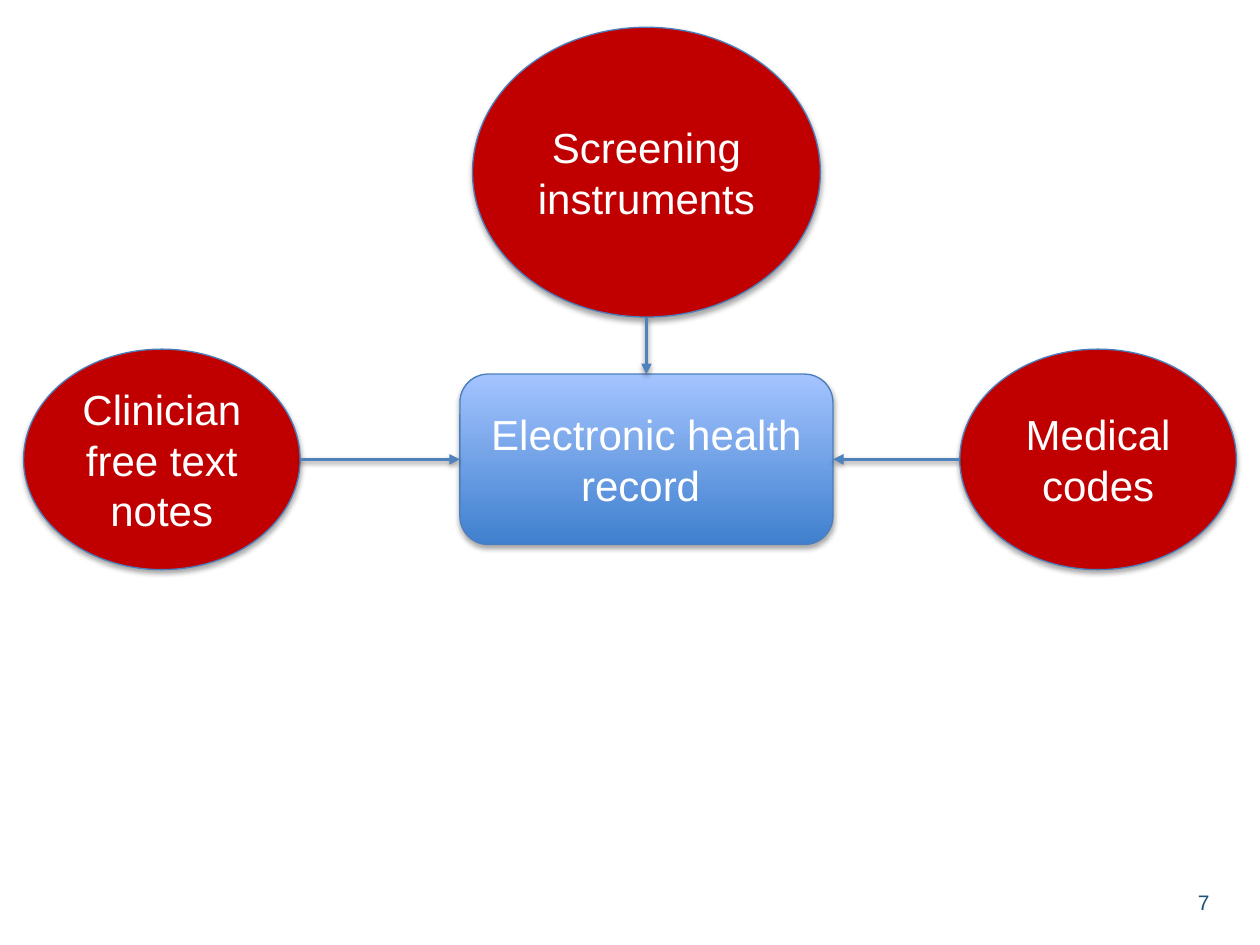
from lxml.etree import SubElement
from pptx import Presentation
from pptx.dml.color import RGBColor
from pptx.enum.shapes import MSO_CONNECTOR as Connector, MSO_SHAPE as Shape
from pptx.enum.text import MSO_ANCHOR as Anchor, PP_ALIGN as Align
from pptx.oxml.ns import qn
from pptx.util import Pt

FONT = "Arial"
WHITE, RED, OUTLINE, ARROW, NUMBER = "FFFFFF", "C00000", "4B7EBC", "4F81BD", "1A5279"
GRADIENT = ("3F80CE", "A4C4FF")  # bottom, top

ROW_Y = 262.5    # middle of the lower row
RECORD_X = 369.4
TOP, LEFT, RIGHT = 0, 1, 3  # connection sites of the record box

RECORD = ("Electronic health record ", RECORD_X, ROW_Y, 213.2, 97.4)
# text, centre x, centre y, width, height, side of the record box it feeds
SOURCES = [
    ("Clinician free text notes", 92.5, ROW_Y, 158, 126, LEFT),
    ("Medical codes", 627.5, ROW_Y, 158, 126, RIGHT),
    ("Screening instruments", RECORD_X, 98.4, 198.8, 165.6, TOP),
]


def color(value):
    return RGBColor.from_string(value)


def add_text(frame, text, size, shade):
    span = frame.paragraphs[0].add_run()
    span.text = text
    span.font.name, span.font.size = FONT, Pt(size)
    span.font.color.rgb = color(shade)


def add_shadow(item, distance, opacity):
    """Add a soft shadow that falls straight down."""
    effects = SubElement(item._element.spPr, qn("a:effectLst"))
    shadow = SubElement(effects, qn("a:outerShdw"), blurRad=str(Pt(3.1)),
                        dist=str(Pt(distance)), dir="5400000", rotWithShape="0")
    black = SubElement(shadow, qn("a:srgbClr"), val="000000")
    SubElement(black, qn("a:alpha"), val=str(opacity * 1000))


def add_node(page, kind, text, x, y, width, height):
    """Add an outlined shape centred on x, y."""
    node = page.shapes.add_shape(kind, Pt(x - width / 2), Pt(y - height / 2),
                                 Pt(width), Pt(height))
    if kind == Shape.OVAL:
        node.fill.solid()
        node.fill.fore_color.rgb = color(RED)
    else:
        node.fill.gradient()
        node.fill.gradient_angle = 90
        for stop, shade in zip(node.fill.gradient_stops, GRADIENT):
            stop.color.rgb = color(shade)
    node.line.color.rgb = color(OUTLINE)
    node.line.width = Pt(0.75)
    add_shadow(node, 1.8, 35)
    frame = node.text_frame
    frame.word_wrap = True
    frame.vertical_anchor = Anchor.MIDDLE
    frame.paragraphs[0].alignment = Align.CENTER
    add_text(frame, text, 24, WHITE)
    return node


def add_arrow(page, x, y, target, site):
    arrow = page.shapes.add_connector(Connector.STRAIGHT, Pt(x), Pt(y), Pt(x), Pt(y))
    arrow.end_connect(target, site)
    arrow.line.color.rgb = color(ARROW)
    arrow.line.width = Pt(2)
    SubElement(arrow.line._get_or_add_ln(), qn("a:tailEnd"), type="triangle")
    add_shadow(arrow, 1.6, 38)


def main():
    deck = Presentation()
    deck.slide_width, deck.slide_height = Pt(720), Pt(540)
    page = deck.slides.add_slide(deck.slide_layouts[6])

    number = page.shapes.add_textbox(Pt(677.5), Pt(504.7), Pt(44), Pt(28.8))
    number.text_frame.word_wrap = True
    add_text(number.text_frame, "7", 12, NUMBER)

    record = add_node(page, Shape.ROUNDED_RECTANGLE, *RECORD)
    for *node, _ in SOURCES:
        add_node(page, Shape.OVAL, *node)

    for _, x, y, width, height, site in SOURCES:
        start_x = x + {LEFT: width / 2, RIGHT: -width / 2, TOP: 0}[site]
        start_y = y + (height / 2 if site == TOP else 0)
        add_arrow(page, start_x, start_y, record, site)

    deck.save("out.pptx")


if __name__ == "__main__":
    main()
